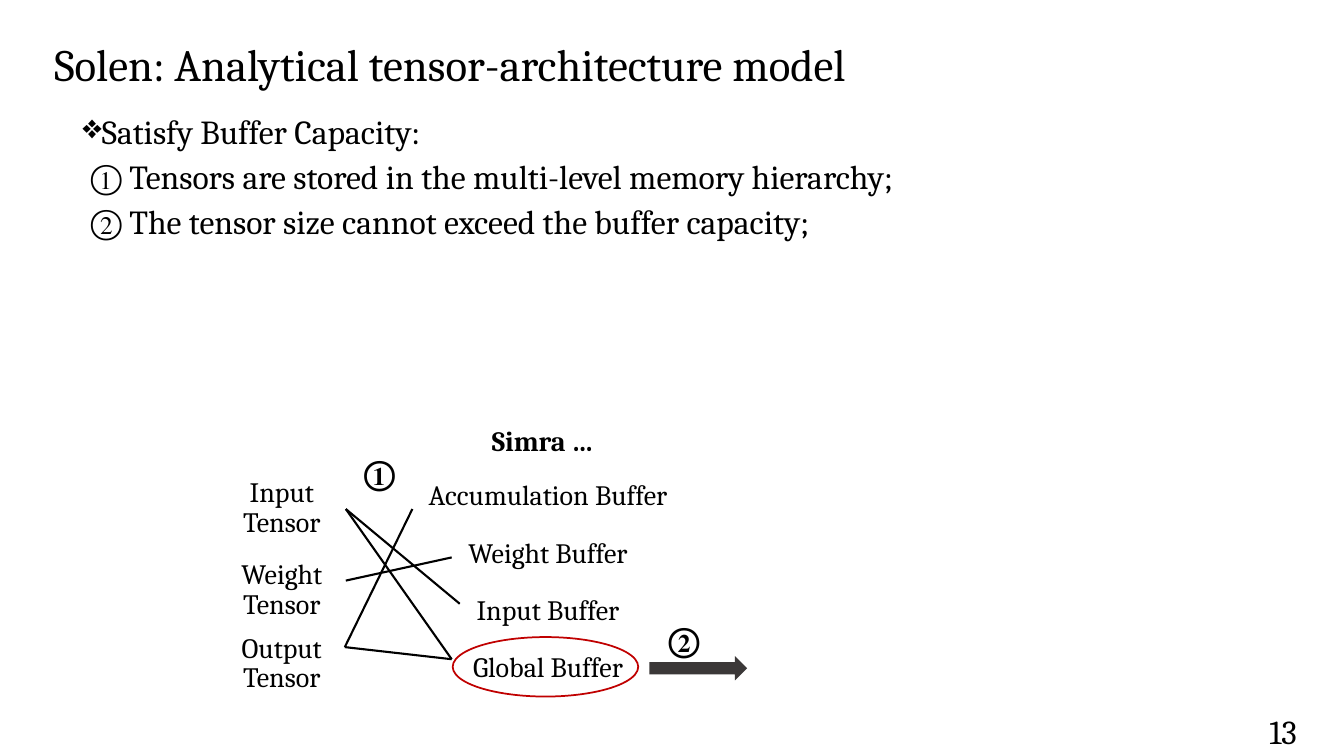
from lxml import etree
from pptx import Presentation
from pptx.dml.color import RGBColor
from pptx.enum.shapes import MSO_CONNECTOR, MSO_SHAPE
from pptx.enum.text import MSO_ANCHOR, PP_ALIGN
from pptx.oxml.ns import qn
from pptx.util import Inches, Pt

FONT = "Cambria"
BLACK, RED, GRAY = "000000", "C00000", "3B3838"

TITLE = "Solen: Analytical tensor-architecture model"
HEADING = "Satisfy Buffer Capacity:"
POINTS = ["① Tensors are stored in the multi-level memory hierarchy;",
          "② The tensor size cannot exceed the buffer capacity;"]
ACCELERATOR = "Simra …"
PAGE = "13"
BUFFERS = ["Accumulation Buffer", "Weight Buffer", "Input Buffer", "Global Buffer"]
TENSOR_TOPS = {"Input": 4.67, "Weight": 5.48, "Output": 6.21}
STEPS = [("①", 3.51, 4.43), ("②", 6.53, 6.09)]

# Where the links leave each tensor and reach each buffer
TENSOR_ENDS = {"Input": (3.43, 5.05), "Weight": (3.43, 5.76), "Output": (3.42, 6.42)}
BUFFER_ENDS = dict(zip(BUFFERS, [(4.09, 5.05), (4.48, 5.53), (4.56, 5.99), (4.48, 6.54)]))
LINKS = [("Input", "Input Buffer"), ("Input", "Global Buffer"),
         ("Weight", "Weight Buffer"), ("Output", "Accumulation Buffer"),
         ("Output", "Global Buffer")]


def rgb(color):
    return RGBColor.from_string(color)


def add_text(s, lines, x, y, w, h, size=20, bold=False, align=PP_ALIGN.LEFT,
             anchor=MSO_ANCHOR.TOP, wrap=True, spacing=None, gap=0):
    """Add a text box with one paragraph per line; gap is the space between them."""
    tf = s.shapes.add_textbox(Inches(x), Inches(y), Inches(w), Inches(h)).text_frame
    tf.word_wrap = wrap
    tf.vertical_anchor = anchor
    for i, line in enumerate(lines):
        p = tf.paragraphs[0] if i == 0 else tf.add_paragraph()
        p.alignment = align
        if spacing:
            p.line_spacing = Pt(spacing)
        if i:
            p.space_before = Pt(gap)
        r = p.add_run()
        r.text = line
        r.font.name, r.font.size, r.font.bold = FONT, Pt(size), bold
        r.font.color.rgb = rgb(BLACK)
    return tf


def indent(p, left, bullet=None):
    pPr = p._p.get_or_add_pPr()
    pPr.set("marL", str(Inches(left)))
    pPr.set("indent", "0")
    if bullet:
        etree.SubElement(pPr, qn("a:buChar")).set("char", bullet)


def add_shape(s, kind, x, y, w, h, fill=None, line=None):
    sp = s.shapes.add_shape(kind, Inches(x), Inches(y), Inches(w), Inches(h))
    sp.shadow.inherit = False
    if fill:
        sp.fill.solid()
        sp.fill.fore_color.rgb = rgb(fill)
    else:
        sp.fill.background()
    if line:
        sp.line.color.rgb = rgb(line)
        sp.line.width = Pt(1.25)
    else:
        sp.line.fill.background()


def add_link(s, start, end):
    cn = s.shapes.add_connector(MSO_CONNECTOR.STRAIGHT,
                                *(Inches(v) for v in start + end))
    cn.line.color.rgb = rgb(BLACK)
    cn.line.width = Pt(1.5)
    etree.SubElement(cn._element.spPr, qn("a:effectLst"))


def main():
    prs = Presentation()
    prs.slide_width, prs.slide_height = Inches(13.33), Inches(7.5)
    s = prs.slides.add_slide(prs.slide_layouts[6])

    add_text(s, [PAGE], 12.49, 7, 0.75, 0.4, size=24)
    add_text(s, [TITLE], 0.44, 0.32, 11.12, 0.64, size=32)

    tf = add_text(s, [HEADING] + POINTS, 0.44, 1.05, 12.09, 1.38, size=24)
    heading, *points = tf.paragraphs
    indent(heading, 0.28, bullet="❖")
    for p in points:
        p.line_spacing = Pt(32)
        indent(p, 0.36)

    for name, top in TENSOR_TOPS.items():
        add_text(s, [name, "Tensor"], 2.12, top, 1.35, 0.75, spacing=21,
                 align=PP_ALIGN.CENTER, anchor=MSO_ANCHOR.MIDDLE)
    add_text(s, BUFFERS, 4.04, 4.7, 2.79, 2.12, gap=17,
             align=PP_ALIGN.CENTER, anchor=MSO_ANCHOR.MIDDLE)
    for tensor, buffer in LINKS:
        add_link(s, TENSOR_ENDS[tensor], BUFFER_ENDS[buffer])

    add_text(s, [ACCELERATOR], 4.78, 4.15, 1.38, 0.44, bold=True, wrap=False)
    add_shape(s, MSO_SHAPE.OVAL, 4.49, 6.32, 1.84, 0.59, line=RED)
    add_shape(s, MSO_SHAPE.RIGHT_ARROW, 6.44, 6.51, 0.97, 0.24, fill=GRAY)
    for mark, x, y in STEPS:
        add_text(s, [mark], x, y, 0.54, 0.5, size=24, bold=True, wrap=False)

    prs.save("out.pptx")


if __name__ == "__main__":
    main()
